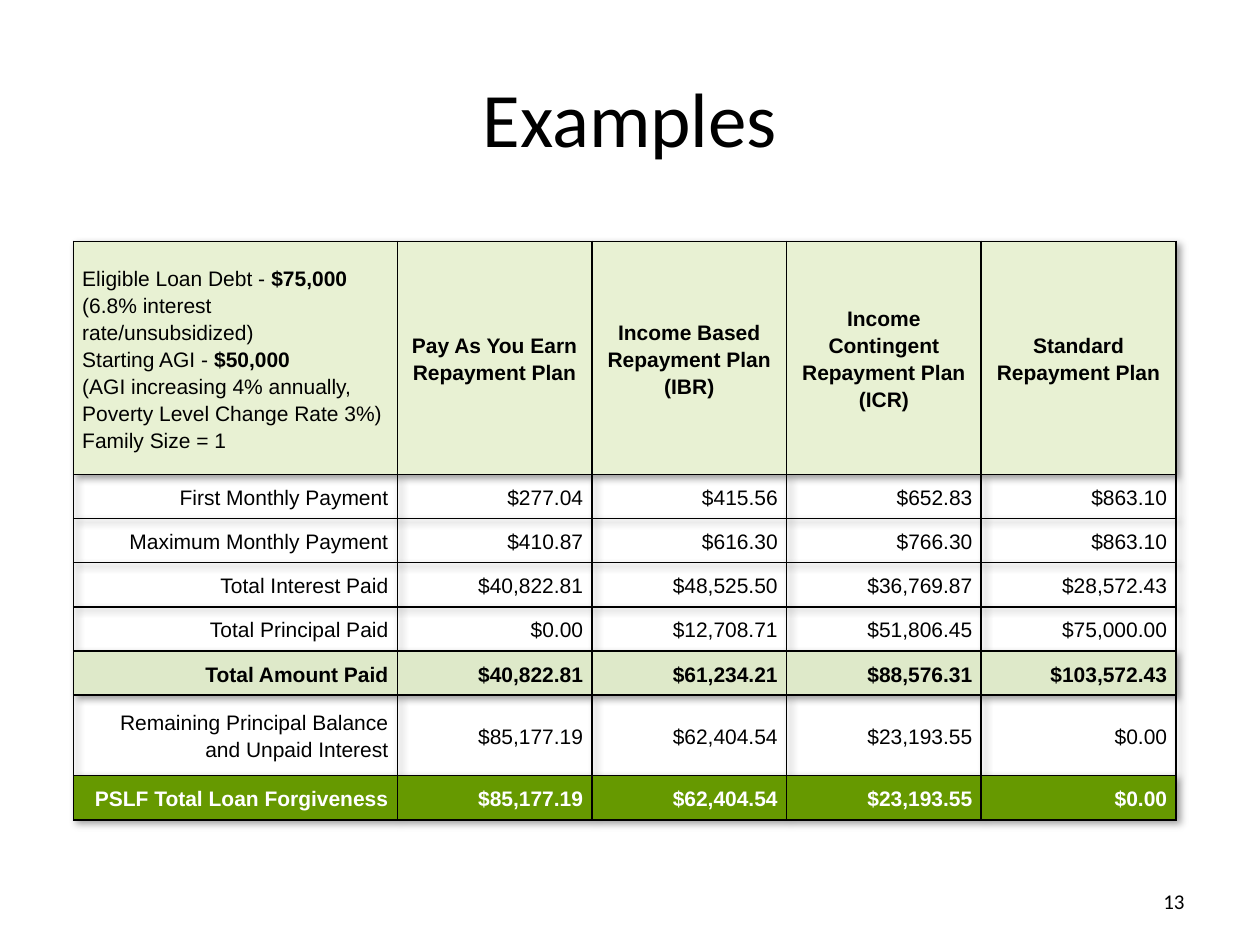
"""Build a slide comparing loan repayment plans in a table."""
from lxml.etree import SubElement
from pptx import Presentation
from pptx.dml.color import RGBColor
from pptx.enum.text import MSO_ANCHOR, PP_ALIGN
from pptx.oxml import parse_xml
from pptx.oxml.ns import nsdecls, qn
from pptx.util import Pt

COLORS = {
    "text": "000000",
    "border": "000000",
    "header": "E8F1D3",
    "total": "DEE9C9",
    "forgiveness": "669900",
    "light_text": "FFFFFF",
}

LOAN_FACTS = [
    [("Eligible Loan Debt - ", False), ("$75,000", True), (" (6.8% interest rate/unsubsidized)", False)],
    [("Starting AGI - ", False), ("$50,000", True)],
    [("(AGI increasing 4% annually, Poverty Level Change Rate 3%)", False)],
    [("Family Size = 1", False)],
]
PLANS = [
    ["Pay As You Earn Repayment Plan"],
    ["Income Based Repayment Plan", "(IBR)"],
    ["Income Contingent Repayment Plan", "(ICR)"],
    ["Standard Repayment Plan"],
]
AMOUNTS = [
    ("First Monthly Payment", "$277.04", "$415.56", "$652.83", "$863.10"),
    ("Maximum Monthly Payment", "$410.87", "$616.30", "$766.30", "$863.10"),
    ("Total Interest Paid", "$40,822.81", "$48,525.50", "$36,769.87", "$28,572.43"),
    ("Total Principal Paid", "$0.00", "$12,708.71", "$51,806.45", "$75,000.00"),
    ("Total Amount Paid", "$40,822.81", "$61,234.21", "$88,576.31", "$103,572.43"),
    ("Remaining Principal Balance and Unpaid Interest", "$85,177.19", "$62,404.54", "$23,193.55", "$0.00"),
    ("PSLF Total Loan Forgiveness", "$85,177.19", "$62,404.54", "$23,193.55", "$0.00"),
]
ROW_STYLES = {0: ("header", "text"), 5: ("total", "text"), 7: ("forgiveness", "light_text")}
ROW_HEIGHTS = [133.2, 25.2, 25.2, 25.2, 25.2, 25.2, 46.1, 25.2]
COLUMN_WIDTHS = [185] + [111.25] * 4


def add_text(paragraph, text, size, font, color="text", bold=False):
    run = paragraph.add_run()
    run.text = text
    run.font.size = Pt(size)
    run.font.name = font
    run.font.bold = bold
    run.font.color.rgb = RGBColor.from_string(COLORS[color])


def fill_cell(cell, paragraphs, align, fill, color):
    cell.margin_left = cell.margin_right = Pt(5)
    cell.margin_top = cell.margin_bottom = Pt(0)
    cell.vertical_anchor = MSO_ANCHOR.MIDDLE
    properties = cell._tc.get_or_add_tcPr()
    for side in ("a:lnL", "a:lnR", "a:lnT", "a:lnB"):
        border = SubElement(properties, qn(side), w=str(Pt(1)))
        solid = SubElement(border, qn("a:solidFill"))
        SubElement(solid, qn("a:srgbClr"), val=COLORS["border"])
    if fill:
        cell.fill.solid()
        cell.fill.fore_color.rgb = RGBColor.from_string(COLORS[fill])
    else:
        cell.fill.background()
    for index, runs in enumerate(paragraphs):
        frame = cell.text_frame
        paragraph = frame.add_paragraph() if index else frame.paragraphs[0]
        paragraph.alignment = align
        paragraph.line_spacing = 1.15
        for text, bold in runs:
            add_text(paragraph, text, 12, "Arial", color, bold)


presentation = Presentation()
presentation.slide_width, presentation.slide_height = Pt(720), Pt(540)
slide = presentation.slides.add_slide(presentation.slide_layouts[5])

title = slide.shapes.title
title.left, title.top, title.width, title.height = Pt(36), Pt(21.6), Pt(648), Pt(90)
title.text_frame.vertical_anchor = MSO_ANCHOR.MIDDLE
title.text_frame.paragraphs[0].alignment = PP_ALIGN.CENTER
add_text(title.text_frame.paragraphs[0], "Examples", 44, "Calibri")

comparison = slide.shapes.add_table(
    len(ROW_HEIGHTS), len(COLUMN_WIDTHS), Pt(42), Pt(138), Pt(sum(COLUMN_WIDTHS)), Pt(sum(ROW_HEIGHTS))
).table
comparison.first_row = comparison.horz_banding = False
comparison._tbl.tblPr.insert(0, parse_xml(
    f'<a:effectLst {nsdecls("a")}><a:outerShdw blurRad="50800" dist="38100" dir="2700000" algn="tl" rotWithShape="0">'
    '<a:srgbClr val="000000"><a:alpha val="40000"/></a:srgbClr></a:outerShdw></a:effectLst>'
))
for column, width in zip(comparison.columns, COLUMN_WIDTHS):
    column.width = Pt(width)
for row, height in zip(comparison.rows, ROW_HEIGHTS):
    row.height = Pt(height)

fill_cell(comparison.cell(0, 0), LOAN_FACTS, PP_ALIGN.LEFT, *ROW_STYLES[0])
for column_index, plan in enumerate(PLANS, 1):
    plan_lines = [[(line, True)] for line in plan]
    fill_cell(comparison.cell(0, column_index), plan_lines, PP_ALIGN.CENTER, *ROW_STYLES[0])
for row_index, amounts in enumerate(AMOUNTS, 1):
    fill, color = ROW_STYLES.get(row_index, (None, "text"))
    for column_index, amount in enumerate(amounts):
        cell = comparison.cell(row_index, column_index)
        fill_cell(cell, [[(amount, row_index in ROW_STYLES)]], PP_ALIGN.RIGHT, fill, color)

page_number = slide.shapes.add_textbox(Pt(516), Pt(500.5), Pt(168), Pt(28.75)).text_frame
page_number.word_wrap = True
page_number.vertical_anchor = MSO_ANCHOR.MIDDLE
page_number.paragraphs[0].alignment = PP_ALIGN.RIGHT
add_text(page_number.paragraphs[0], "13", 12, "Calibri")

presentation.save("out.pptx")
